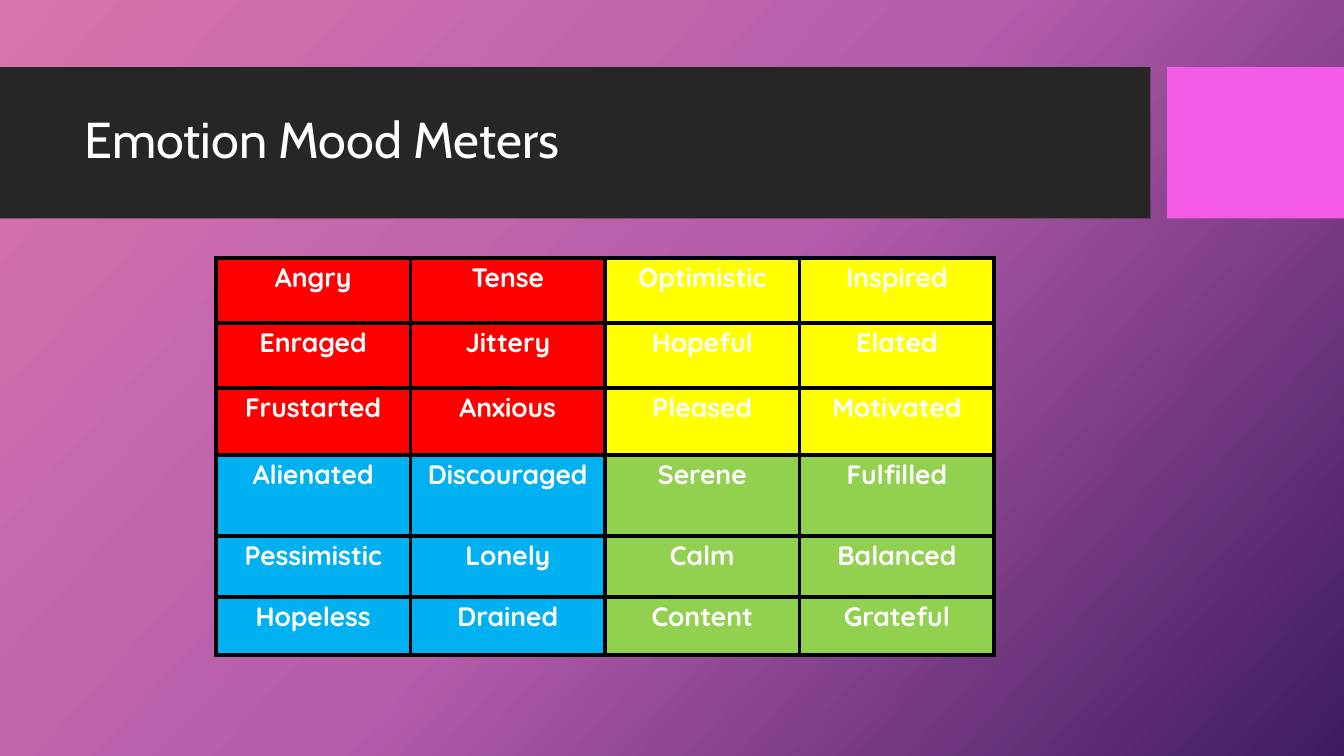
from copy import deepcopy

from lxml import etree
from pptx import Presentation
from pptx import util as u
from pptx.dml.color import RGBColor
from pptx.enum import shapes, text
from pptx.oxml.ns import qn

Pt = u.Pt
COLORS = {
    "rose": "D774AD", "orchid": "B55CAB", "violet": "3E1C5F",
    "band": "262626", "accent": "F35AE6", "white": "FFFFFF", "border": "000000",
    "red": "FF0000", "yellow": "FFFF00", "blue": "00B0F0", "green": "92D050",
}
MOODS = [
    ["Angry", "Tense", "Optimistic", "Inspired"],
    ["Enraged", "Jittery", "Hopeful", "Elated"],
    ["Frustarted", "Anxious", "Pleased", "Motivated"],
    ["Alienated", "Discouraged", "Serene", "Fulfilled"],
    ["Pessimistic", "Lonely", "Calm", "Balanced"],
    ["Hopeless", "Drained", "Content", "Grateful"],
]
QUADRANTS = [["red", "yellow"], ["blue", "green"]]
ROW_HEIGHTS = [46.4, 46.4, 48, 57.6, 44, 41.2]
COL_WIDTH = 139


def rgb(name):
    return RGBColor.from_string(COLORS[name])


def set_background(slide):
    fill = slide.background.fill
    fill.gradient()
    fill.gradient_angle = 318
    stops = next(slide.element.iter(qn("a:gsLst")))
    stops.insert(1, deepcopy(stops[0]))
    for stop, place, color in zip(fill.gradient_stops, (0, 0.5, 1),
                                  ("rose", "orchid", "violet")):
        stop.position = place
        stop.color.rgb = rgb(color)


def add_block(slide, left, width, color):
    sp = slide.shapes.add_shape(shapes.MSO_SHAPE.RECTANGLE,
                                Pt(left), Pt(48), Pt(width), Pt(108))
    sp.shadow.inherit = False
    sp.fill.solid()
    sp.fill.fore_color.rgb = rgb(color)
    sp.line.fill.background()


def add_run(p, words, font, size, bold):
    r = p.add_run()
    r.text = words
    r.font.name = font
    r.font.size = Pt(size)
    r.font.bold = bold
    r.font.color.rgb = rgb("white")


def set_title(slide, words):
    sp = slide.shapes.title
    slide.shapes.element.append(sp.element)
    sp.left, sp.top, sp.width, sp.height = Pt(53.3), Pt(59), Pt(756.7), Pt(85)
    tf = sp.text_frame
    tf.word_wrap = True
    tf.auto_size = text.MSO_AUTO_SIZE.NONE
    tf.vertical_anchor = text.MSO_ANCHOR.MIDDLE
    p = tf.paragraphs[0]
    p.alignment = text.PP_ALIGN.LEFT
    p.line_spacing = 0.9
    add_run(p, words, "Cabin", 36, False)


def set_borders(cell, width):
    props = cell._tc.get_or_add_tcPr()
    for i, side in enumerate(("lnL", "lnR", "lnT", "lnB")):
        line = etree.Element(qn("a:" + side), w=str(Pt(width)))
        solid = etree.SubElement(line, qn("a:solidFill"))
        etree.SubElement(solid, qn("a:srgbClr"), val=COLORS["border"])
        props.insert(i, line)


def fill_cell(cell, words, color):
    cell.fill.solid()
    cell.fill.fore_color.rgb = rgb(color)
    set_borders(cell, 3)
    cell.margin_left = cell.margin_right = Pt(4.3)
    cell.margin_top, cell.margin_bottom = Pt(0.7), Pt(0)
    p = cell.text_frame.paragraphs[0]
    p.alignment = text.PP_ALIGN.CENTER
    p.line_spacing = 1.06
    add_run(p, words, "Quicksand", 19, True)


def add_mood_table(slide):
    rows, cols = len(MOODS), len(MOODS[0])
    table = slide.shapes.add_table(rows, cols, Pt(154.2), Pt(184.3),
                                   Pt(COL_WIDTH * cols), Pt(sum(ROW_HEIGHTS))).table
    for col in table.columns:
        col.width = Pt(COL_WIDTH)
    for i, (height, moods) in enumerate(zip(ROW_HEIGHTS, MOODS)):
        table.rows[i].height = Pt(height)
        for j, mood in enumerate(moods):
            fill_cell(table.cell(i, j), mood, QUADRANTS[i // 3][j // 2])


def main():
    prs = Presentation()
    prs.slide_width, prs.slide_height = Pt(960), Pt(540)
    slide = prs.slides.add_slide(prs.slide_layouts[5])
    set_background(slide)
    add_block(slide, 0, 821.8, "band")
    add_block(slide, 833.6, 126.4, "accent")
    set_title(slide, "Emotion Mood Meters")
    add_mood_table(slide)
    prs.save("out.pptx")


if __name__ == "__main__":
    main()
